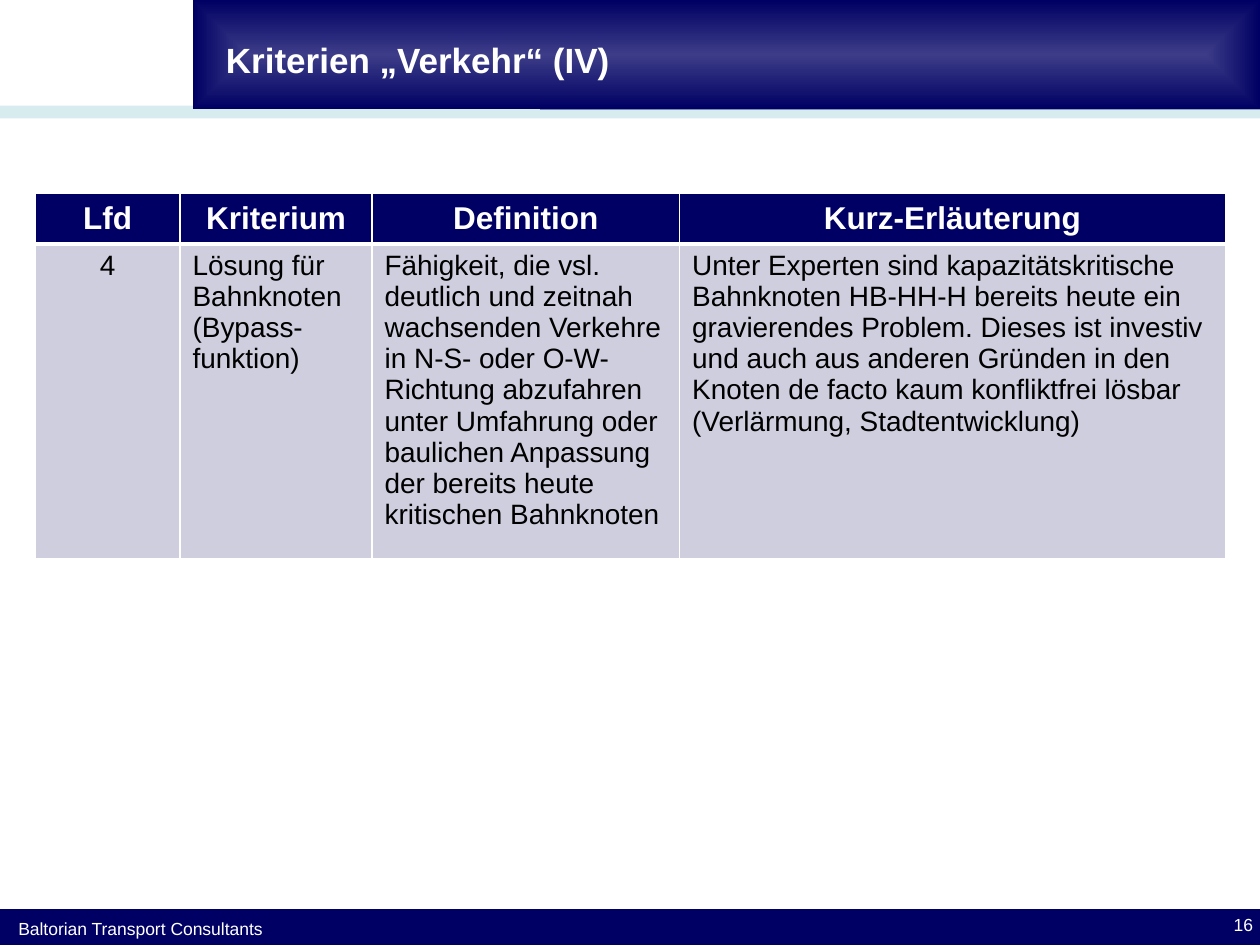
from dataclasses import dataclass

from lxml.etree import SubElement
from pptx import Presentation
from pptx.dml.color import RGBColor as RGB
from pptx.enum.shapes import MSO_SHAPE as Shape
from pptx.enum.text import MSO_ANCHOR as Anchor, PP_ALIGN as Align
from pptx.oxml import parse_xml
from pptx.oxml.ns import nsdecls, qn
from pptx.util import Cm, Pt


@dataclass(frozen=True)
class Theme:
    """Colours, font and type sizes of the slide."""
    navy: str = "000064"
    glow: str = "3C3C88"
    aqua: str = "BBE0E3"
    cell: str = "CECEDE"
    white: str = "FFFFFF"
    black: str = "000000"
    font: str = "Arial"
    title: int = 20
    head: int = 18
    body: int = 16
    small: int = 10


def write(tf, text, size, color, font=Theme.font, bold=False, align=Align.LEFT, anchor=Anchor.TOP):
    """Fill a text frame, one paragraph per line of text."""
    tf.word_wrap = True
    tf.vertical_anchor = anchor
    for i, line in enumerate(text.split("\n")):
        p = tf.paragraphs[0] if i == 0 else tf.add_paragraph()
        p.alignment = align
        r = p.add_run()
        r.text = line
        r.font.name, r.font.size, r.font.bold = font, Pt(size), bold
        r.font.color.rgb = RGB.from_string(color)


class Deck:
    """Holds the theme and the current slide."""

    def __init__(self, prs, theme):
        """Add a slide with the title-only layout."""
        self.t = theme
        self.s = prs.slides.add_slide(prs.slide_layouts[5])

    def bar(self, x, y, w, h, color, alpha=100):
        """Draw a plain band."""
        sp = self.s.shapes.add_shape(Shape.RECTANGLE, Cm(x), Cm(y), Cm(w), Cm(h))
        sp.shadow.inherit = False
        sp.line.fill.background()
        sp.fill.solid()
        sp.fill.fore_color.rgb = RGB.from_string(color)
        if alpha < 100:
            clr = sp.element.spPr.find(qn("a:solidFill"))[0]
            SubElement(clr, qn("a:alpha"), val=str(alpha * 1000))
        return sp

    def gradient_bar(self, x, y, w, h, start, end, end_alpha=100, shade='<a:lin ang="0"/>'):
        """Draw a band with a two-stop gradient."""
        sp = self.bar(x, y, w, h, end)
        solid = sp.element.spPr.find(qn("a:solidFill"))
        grad = parse_xml(
            f'<a:gradFill {nsdecls("a")} rotWithShape="1"><a:gsLst>'
            f'<a:gs pos="0"><a:srgbClr val="{start}"/></a:gs>'
            f'<a:gs pos="100000"><a:srgbClr val="{end}"><a:alpha val="{end_alpha * 1000}"/>'
            f'</a:srgbClr></a:gs></a:gsLst>{shade}</a:gradFill>')
        solid.getparent().replace(solid, grad)

    def title(self, x, y, w, h, text):
        """Place the title placeholder in front of the bands."""
        sp = self.s.shapes.title
        sp.left, sp.top, sp.width, sp.height = Cm(x), Cm(y), Cm(w), Cm(h)
        sp.element.getparent().append(sp.element)
        write(sp.text_frame, text, self.t.title, self.t.white, bold=True, anchor=Anchor.MIDDLE)

    def label(self, x, y, w, h, text, align=Align.LEFT):
        """Add a small white text."""
        sp = self.s.shapes.add_textbox(Cm(x), Cm(y), Cm(w), Cm(h))
        write(sp.text_frame, text, self.t.small, self.t.white, align=align)

    def borders(self, cell, **widths):
        """Set white cell borders, widths in points by side."""
        pr = cell._tc.get_or_add_tcPr()
        for side in "LRTB":
            ln = SubElement(pr, qn(f"a:ln{side}"), w=str(Pt(widths.get(side, 1))))
            SubElement(SubElement(ln, qn("a:solidFill")), qn("a:srgbClr"), val=self.t.white)

    def table(self, x, y, cols, heights, rows):
        """Add a table with a header row and a centred first column."""
        t = self.t
        tbl = self.s.shapes.add_table(
            len(rows), len(cols), Cm(x), Cm(y), Cm(sum(cols)), Cm(sum(heights))).table
        for col, w in zip(tbl.columns, cols):
            col.width = Cm(w)
        for i, (row, h) in enumerate(zip(rows, heights)):
            tbl.rows[i].height = Cm(h)
            head = i == 0
            for j, text in enumerate(row):
                cell = tbl.cell(i, j)
                self.borders(cell, **({"B": 3} if head else {"T": 3}))
                cell.fill.solid()
                cell.fill.fore_color.rgb = RGB.from_string(t.navy if head else t.cell)
                write(cell.text_frame, text, t.head if head else t.body,
                      t.white if head else t.black, bold=head,
                      align=Align.CENTER if head or j == 0 else Align.LEFT)
                cell.vertical_anchor = Anchor.MIDDLE if head else Anchor.TOP


ROWS = [
    ["Lfd", "Kriterium", "Definition", "Kurz-Erläuterung"],
    ["4",
     "Lösung für Bahnknoten\n(Bypass-funktion)",
     "Fähigkeit, die vsl. deutlich und zeitnah wachsenden Verkehre in N-S- oder "
     "O-W-Richtung abzufahren unter Umfahrung oder baulichen Anpassung der bereits "
     "heute kritischen Bahnknoten",
     "Unter Experten sind kapazitätskritische Bahnknoten HB-HH-H bereits heute ein "
     "gravierendes Problem. Dieses ist investiv und auch aus anderen Gründen in den "
     "Knoten de facto kaum konfliktfrei lösbar (Verlärmung, Stadtentwicklung)"],
]


def main():
    """Build and save the slide."""
    prs = Presentation()
    prs.slide_width, prs.slide_height = Cm(25.4), Cm(19.05)
    t = Theme()
    d = Deck(prs, t)
    d.gradient_bar(10.9, 0, 14.5, 2.21, t.navy, t.navy, end_alpha=70)
    d.bar(0, 2.13, 25.4, 0.26, t.aqua, alpha=60)
    d.gradient_bar(3.89, 0, 21.51, 2.2, t.glow, t.navy, shade=(
        '<a:path path="shape"><a:fillToRect l="50000" t="50000" r="50000" b="50000"/></a:path>'))
    d.bar(0, 18.33, 25.4, 0.72, t.navy)
    d.label(0.12, 18.39, 16, 0.68, "Baltorian Transport Consultants")
    d.title(4.3, 0.52, 21.1, 1.37, "Kriterien „Verkehr“ (IV)")
    d.label(19.59, 18.31, 5.92, 1.32, "16", align=Align.RIGHT)
    d.table(0.71, 3.89, [2.92, 3.87, 6.2, 11], [1.03, 5.87], ROWS)
    prs.save("out.pptx")


if __name__ == "__main__":
    main()
